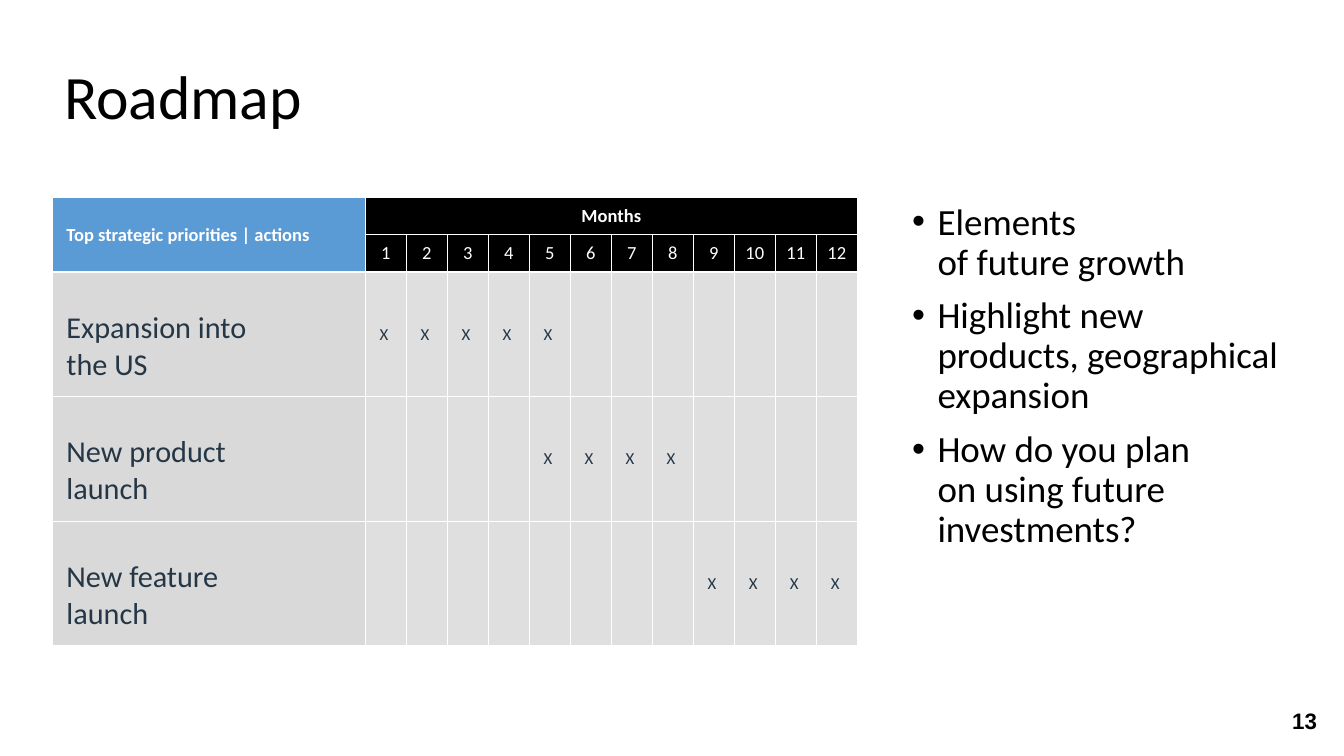
"""Build a roadmap slide with a month-by-month schedule and talking points."""
from dataclasses import dataclass

from lxml.etree import SubElement
from pptx import Presentation
from pptx.dml.color import RGBColor
from pptx.enum.text import MSO_ANCHOR, MSO_AUTO_SIZE, PP_ALIGN
from pptx.oxml.ns import qn
from pptx.util import Inches, Pt


@dataclass(frozen=True)
class Theme:
    font: str = "Calibri"
    number_font: str = "Arial"
    black: str = "000000"
    white: str = "FFFFFF"
    blue: str = "5B9BD5"
    navy: str = "253746"
    label_fill: str = "D9D9D9"
    month_fill: str = "DFDFE0"
    title_size: float = 36.7
    body_size: float = 22
    label_size: float = 18
    number_size: float = 13.3
    header_size: float = 11
    mark_size: float = 10


class SlideBuilder:
    def __init__(self, prs, theme):
        self.theme = theme
        self.s = prs.slides.add_slide(prs.slide_layouts[1])

    def place(self, sp, left, top, width, height, anchor):
        sp.left, sp.top = Inches(left), Inches(top)
        sp.width, sp.height = Inches(width), Inches(height)
        tf = sp.text_frame
        tf.word_wrap = True
        tf.auto_size = MSO_AUTO_SIZE.NONE
        tf.vertical_anchor = anchor
        return tf

    def add_text(self, p, text, size, color, bold=False, align=PP_ALIGN.LEFT, font=None):
        p.alignment = align
        for i, line in enumerate(text.split("\n")):
            if i:
                p.add_line_break()
            r = p.add_run()
            r.text = line
            r.font.name = font or self.theme.font
            r.font.size = Pt(size)
            r.font.bold = bold
            r.font.color.rgb = RGBColor.from_string(color)

    def title(self, text, *box):
        tf = self.place(self.s.shapes.title, *box, MSO_ANCHOR.MIDDLE)
        p = tf.paragraphs[0]
        p.line_spacing = 0.9
        self.add_text(p, text, self.theme.title_size, self.theme.black)

    def bullets(self, items, *box):
        tf = self.place(self.s.placeholders[1], *box, MSO_ANCHOR.TOP)
        for i, item in enumerate(items):
            p = tf.add_paragraph() if i else tf.paragraphs[0]
            p.line_spacing = 0.9
            p.space_before = Pt(8.3)
            self.add_text(p, item, self.theme.body_size, self.theme.black)
            pPr = p._p.get_or_add_pPr()
            pPr.set("marL", str(Inches(0.21)))
            pPr.set("indent", str(Inches(-0.21)))
            SubElement(pPr, qn("a:buFont"), typeface="Arial")
            SubElement(pPr, qn("a:buChar"), char="•")

    def page_number(self, text, *box):
        sp = self.s.shapes.add_textbox(0, 0, 0, 0)
        tf = self.place(sp, *box, MSO_ANCHOR.BOTTOM)
        tf.margin_left = tf.margin_right = tf.margin_top = tf.margin_bottom = 0
        self.add_text(tf.paragraphs[0], text, self.theme.number_size, self.theme.black,
                      True, PP_ALIGN.CENTER, self.theme.number_font)

    def cell(self, cell, fill, text="", size=10, color="000000", bold=False,
             align=PP_ALIGN.CENTER, anchor=MSO_ANCHOR.MIDDLE, left=0, top=0, right=0):
        tcPr = cell._tc.get_or_add_tcPr()
        for side in ("lnL", "lnR", "lnT", "lnB"):
            ln = SubElement(tcPr, qn(f"a:{side}"), w=str(Pt(1)))
            line_fill = SubElement(ln, qn("a:solidFill"))
            SubElement(line_fill, qn("a:srgbClr"), val=self.theme.white)
        cell.fill.solid()
        cell.fill.fore_color.rgb = RGBColor.from_string(fill)
        cell.vertical_anchor = anchor
        cell.margin_left, cell.margin_right = Inches(left), Inches(right)
        cell.margin_top, cell.margin_bottom = Inches(top), 0
        if text:
            self.add_text(cell.text_frame.paragraphs[0], text, size, color, bold, align)

    def roadmap(self, priorities, left, top, width, label_width, header_height, row_height):
        t = self.theme
        months = range(1, 13)
        heights = [header_height] * 2 + [row_height] * len(priorities)
        table = self.s.shapes.add_table(
            len(heights), len(months) + 1, Inches(left), Inches(top),
            Inches(width), Inches(sum(heights))).table
        table.first_row = table.horz_banding = False
        for row, height in zip(table.rows, heights):
            row.height = Inches(height)
        table.columns[0].width = Inches(label_width)
        for month in months:
            table.columns[month].width = Inches((width - label_width) / len(months))

        self.cell(table.cell(0, 0), t.blue, "Top strategic priorities | actions",
                  t.header_size, t.white, True, PP_ALIGN.LEFT, left=0.12)
        self.cell(table.cell(1, 0), t.blue)
        for month in months:
            self.cell(table.cell(0, month), t.black, "Months" if month == 1 else "",
                      t.header_size, t.white, True)
            self.cell(table.cell(1, month), t.black, str(month), t.header_size, t.white)
        table.cell(0, 0).merge(table.cell(1, 0))
        table.cell(0, 1).merge(table.cell(0, len(months)))

        for row, (label, first, last) in enumerate(priorities, start=2):
            self.cell(table.cell(row, 0), t.label_fill, label, t.label_size, t.navy,
                      align=PP_ALIGN.LEFT, anchor=MSO_ANCHOR.TOP, left=0.12, top=0.31)
            for month in months:
                mark = "X" if first <= month <= last else ""
                self.cell(table.cell(row, month), t.month_fill, mark, t.mark_size,
                          t.navy, right=0.03)


def main():
    prs = Presentation()
    prs.slide_width, prs.slide_height = Inches(11.11), Inches(6.25)
    slide = SlideBuilder(prs, Theme())
    slide.page_number("13", 10.46, 5.86, 0.65, 0.21)
    slide.bullets(["Elements\nof future growth",
                   "Highlight new products, geographical expansion",
                   "How do you plan\non using future investments?"],
                  7.44, 1.63, 3.23, 3.92)
    slide.title("Roadmap", 0.43, 0.32, 9.41, 1.01)
    slide.roadmap([("Expansion into\nthe US", 1, 5),
                   ("New product\nlaunch", 5, 8),
                   ("New feature\nlaunch", 9, 12)],
                  left=0.43, top=1.63, width=6.66, label_width=2.59,
                  header_height=0.31, row_height=1.03)
    prs.save("out.pptx")


if __name__ == "__main__":
    main()
